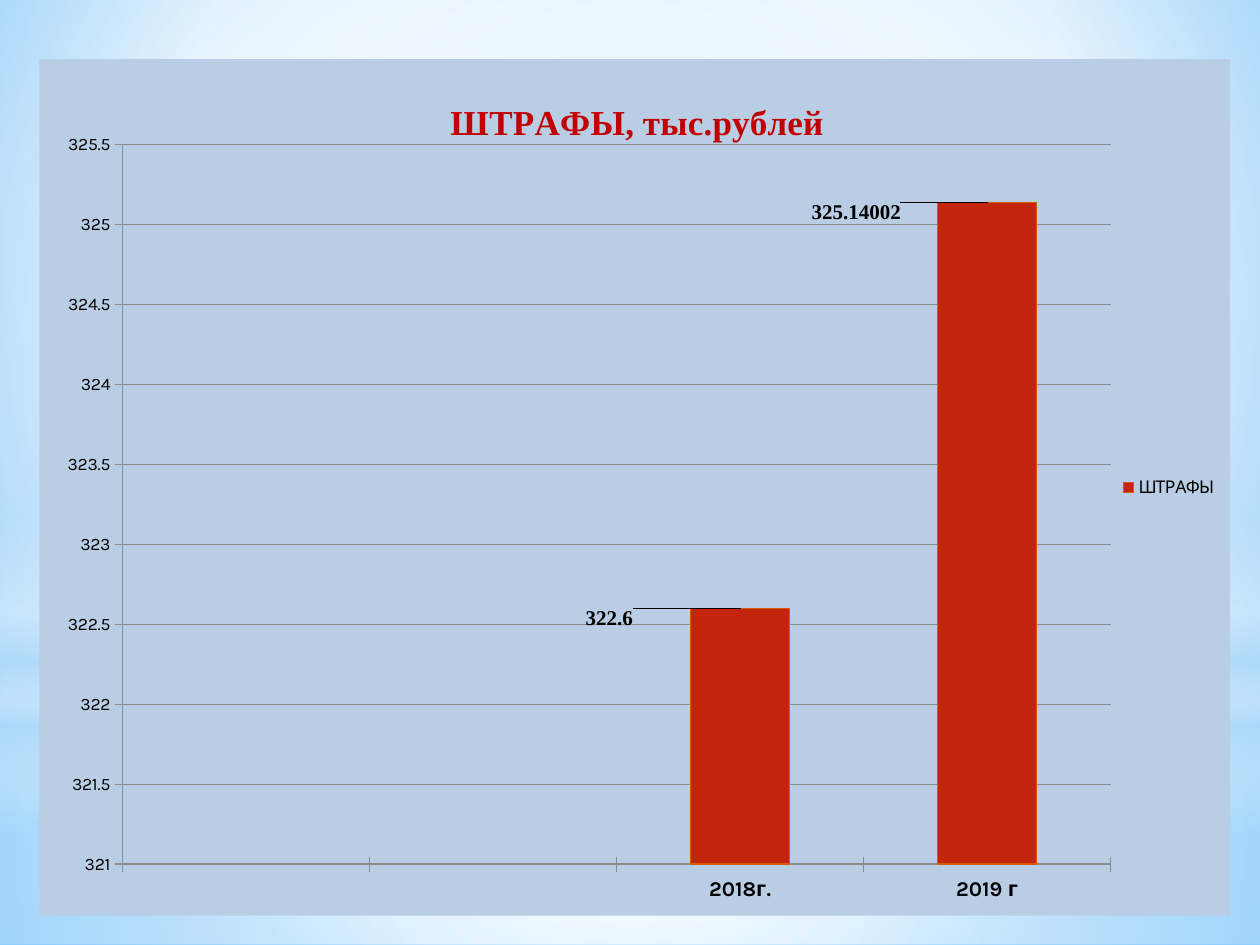
from lxml.etree import SubElement
from pptx import Presentation
from pptx.chart.data import CategoryChartData
from pptx.dml.color import RGBColor
from pptx.enum.chart import XL_CHART_TYPE as ChartType
from pptx.enum.chart import XL_LABEL_POSITION as LabelPos
from pptx.enum.chart import XL_LEGEND_POSITION as LegendPos
from pptx.enum.chart import XL_TICK_MARK as Tick
from pptx.enum.shapes import MSO_SHAPE as Shape
from pptx.oxml import parse_xml
from pptx.oxml.ns import nsdecls, qn
from pptx.util import Pt

WHITE = RGBColor(0xFF, 0xFF, 0xFF)
SKY = RGBColor(0x9E, 0xD5, 0xFF)
DEEP_SKY = RGBColor(0x5B, 0xB9, 0xFF)
PALE_SKY = RGBColor(0xB4, 0xDC, 0xFA)
PANEL = RGBColor(0xB9, 0xCD, 0xE5)
BAR = RGBColor(0xC3, 0x26, 0x0C)
BAR_EDGE = RGBColor(0xD8, 0x5C, 0x00)
TITLE = RGBColor(0xC0, 0x00, 0x00)
GRID = RGBColor(0x8B, 0x8B, 0x8B)
BLACK = RGBColor(0, 0, 0)
BODY_FONT, SERIF = "Karla", "Times New Roman"
CENTER = (50, 50, 50, 50)


def set_gradient(fill, holder, stops, focus=None):
    """Give the fill in holder a circular gradient, or a downward one without focus."""
    fill.gradient()
    old = holder.find(qn("a:gradFill"))
    stop_xml = "".join(
        f'<a:gs pos="{pos * 1000}"><a:srgbClr val="{color}">'
        f'<a:alpha val="{alpha * 1000}"/></a:srgbClr></a:gs>'
        for pos, color, alpha in stops)
    way = '<a:lin ang="5400000" scaled="0"/>'
    if focus:
        rect = " ".join(f'{side}="{v * 1000}"' for side, v in zip("ltrb", focus))
        way = f'<a:path path="circle"><a:fillToRect {rect}/></a:path>'
    new = parse_xml(f'<a:gradFill {nsdecls("a")} rotWithShape="1">'
                    f'<a:gsLst>{stop_xml}</a:gsLst>{way}</a:gradFill>')
    holder.replace(old, new)


def add_glow(slide, box, kind, stops, focus=CENTER):
    """Add one translucent gradient shape."""
    sp = slide.shapes.add_shape(kind, *map(Pt, box))
    sp.shadow.inherit = False
    sp.line.fill.background()
    set_gradient(sp.fill, sp.element.spPr, stops, focus)


def add_backdrop(slide, box):
    """Paint the sky background and its glows over the box."""
    x, y, w, h = box
    fill = slide.background.fill
    fill.solid()
    holder = next(slide.element.iter(qn("p:bgPr")))
    set_gradient(fill, holder, [(0, SKY, 100), (60, WHITE, 100), (100, DEEP_SKY, 100)],
                 (20, 10, 20, 60))
    split = 402
    add_glow(slide, (x, y + split, w, h - split), Shape.RECTANGLE,
             [(0, WHITE, 91), (37, WHITE, 76), (100, PALE_SKY, 79)])
    add_glow(slide, (x, y, w, split), Shape.RECTANGLE,
             [(0, WHITE, 89), (48, WHITE, 62), (100, PALE_SKY, 79)])
    add_glow(slide, (x, y + 297, w, 180), Shape.RECTANGLE,
             [(0, WHITE, 0), (29, WHITE, 30), (45, PALE_SKY, 40),
              (55, WHITE, 26), (65, PALE_SKY, 60), (100, WHITE, 0)], None)
    add_glow(slide, (x, y + 126, w, split), Shape.OVAL,
             [(0, WHITE, 100), (56, WHITE, 0)])


def set_layout(parent, index, **values):
    """Insert a manual layout into a chart part."""
    old = parent.find(qn("c:layout"))
    if old is not None:
        parent.remove(old)
    layout = parse_xml(f'<c:layout {nsdecls("c")}><c:manualLayout/></c:layout>')
    for name, value in values.items():
        SubElement(layout[0], qn(f"c:{name}")).set("val", str(value))
    parent.insert(index, layout)


def style_font(font, size, name=BODY_FONT, bold=False, color=BLACK):
    """Set the look of a chart font."""
    font.size, font.name, font.bold = Pt(size), name, bold
    font.color.rgb = color


def style_axis(axis, size, bold=False):
    """Set the ticks, line and font of an axis."""
    axis.major_tick_mark, axis.minor_tick_mark = Tick.CROSS, Tick.NONE
    axis.format.line.color.rgb = GRID
    axis.format.line.width = Pt(0.75)
    style_font(axis.tick_labels.font, size, bold=bold)


def style_series(series):
    """Colour the bars and label the filled points."""
    series.format.fill.solid()
    series.format.fill.fore_color.rgb = BAR
    series.format.line.color.rgb = BAR_EDGE
    series.format.line.width = Pt(0.75)
    labels = series.data_labels
    labels.show_value = True
    style_font(labels.font, 12, SERIF, True)
    for i in (2, 3):
        label = series.points[i].data_label
        style_font(label.font, 12, SERIF, True)
        label.position = LabelPos.OUTSIDE_END


def add_fines_chart(slide, box):
    """Add the column chart of fines in the box."""
    data = CategoryChartData()
    data.categories = ["", "", "2018г.", "2019 г"]
    data.add_series("ШТРАФЫ", (None, None, 322.6, 325.14002))
    chart = slide.shapes.add_chart(
        ChartType.COLUMN_CLUSTERED, *map(Pt, box), data).chart
    style_font(chart.font, 10)
    space = chart.element
    body = space.find(qn("c:chart"))
    body.addnext(parse_xml(
        f'<c:spPr {nsdecls("c", "a")}><a:solidFill><a:srgbClr val="{PANEL}"/>'
        '</a:solidFill><a:ln><a:noFill/></a:ln></c:spPr>'))

    chart.has_title = True
    tf = chart.chart_title.text_frame
    tf.text = "ШТРАФЫ, тыс.рублей"
    style_font(tf.paragraphs[0].runs[0].font, 20, SERIF, True, TITLE)
    set_layout(body.find(qn("c:title")), 1, xMode="edge", yMode="edge", x=0.34, y=0.04)

    chart.has_legend = True
    chart.legend.position = LegendPos.RIGHT
    chart.legend.include_in_layout = False
    style_font(chart.legend.font, 10)

    style_axis(chart.category_axis, 12, True)
    axis = chart.value_axis
    style_axis(axis, 10)
    axis.minimum_scale, axis.maximum_scale, axis.major_unit = 321, 325.5, 0.5
    axis.has_major_gridlines = True
    axis.major_gridlines.format.line.color.rgb = GRID
    axis.major_gridlines.format.line.width = Pt(0.75)

    plot = chart.plots[0]
    plot.gap_width, plot.vary_by_categories = 150, False
    style_series(plot.series[0])
    for label in space.iter(qn("c:dLbl")):
        set_layout(label, 1, x=-0.11, y=0.03)
    set_layout(body.find(qn("c:plotArea")), 0, layoutTarget="inner", xMode="edge",
               yMode="edge", x=0.07, y=0.1, w=0.83, h=0.84)


def main():
    """Build the slide and save it."""
    prs = Presentation()
    prs.slide_width, prs.slide_height = Pt(720), Pt(540)
    slide = prs.slides.add_slide(prs.slide_layouts[6])
    add_backdrop(slide, (0, 0, 720, 540))
    add_fines_chart(slide, (22.5, 33.75, 680.25, 489.5))
    prs.save("out.pptx")


if __name__ == "__main__":
    main()
